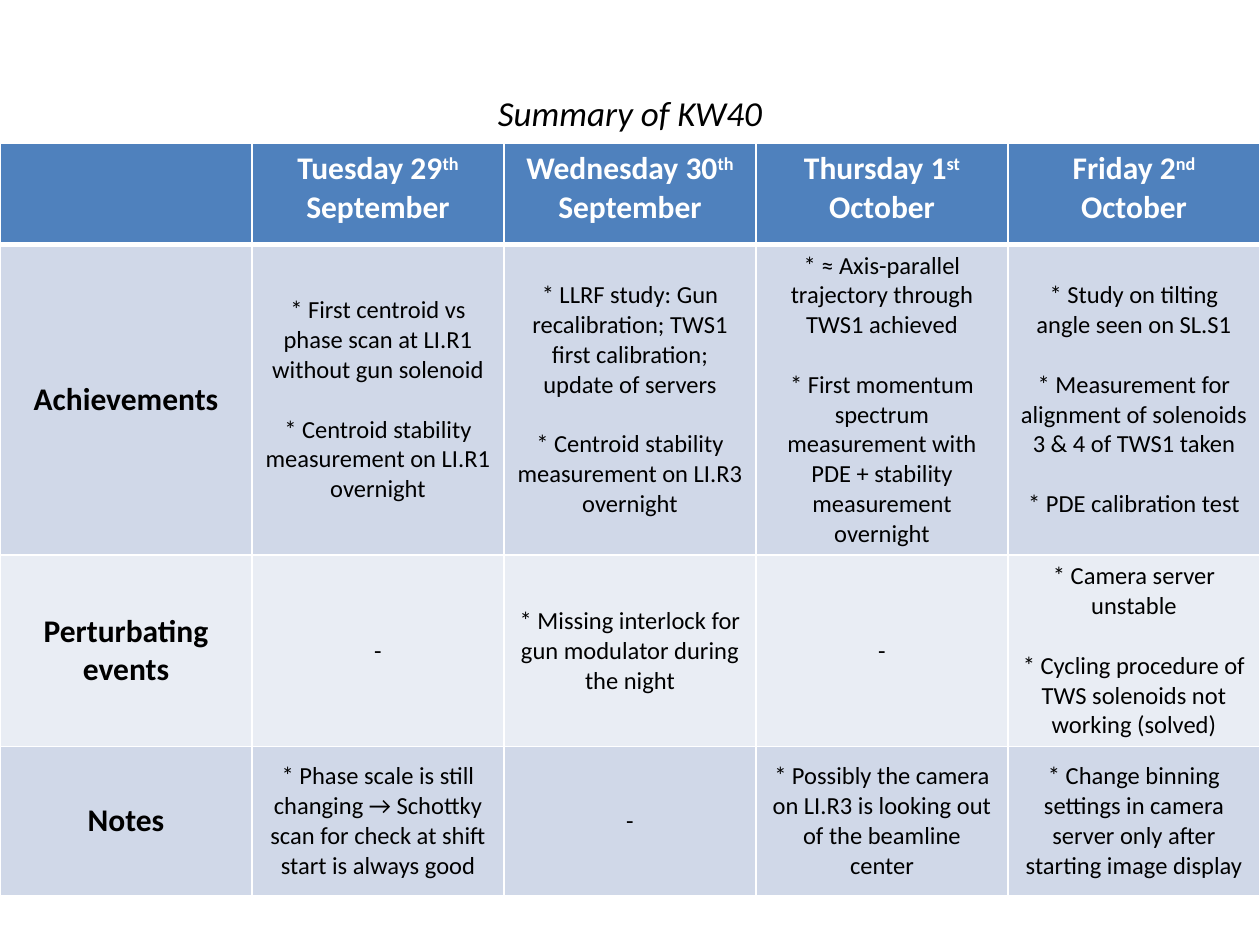
"""Build the weekly shift summary slide."""
from lxml import etree
from pptx import Presentation
from pptx import util as u
from pptx.dml.color import RGBColor
from pptx.enum import text
from pptx.oxml.ns import qn

COLORS = {"head": "4F81BD", "odd": "D0D8E8", "even": "E9EDF4",
          "white": "FFFFFF", "black": "000000"}

HEADS = [("Tuesday 29", "th", " September"), ("Wednesday 30", "th", " September"),
         ("Thursday 1", "st", " October"), ("Friday 2", "nd", " October")]

ROWS = [
    ("Achievements", [
        ["* First centroid vs phase scan at LI.R1 without gun solenoid",
         "* Centroid stability measurement on LI.R1 overnight"],
        ["* LLRF study: Gun recalibration; TWS1 first calibration; update of servers",
         "* Centroid stability measurement on LI.R3 overnight"],
        ["* ≈ Axis-parallel trajectory through TWS1 achieved",
         "* First momentum spectrum measurement with PDE + stability measurement overnight"],
        ["* Study on tilting angle seen on SL.S1",
         "* Measurement for alignment of solenoids 3 & 4 of TWS1 taken",
         "* PDE calibration test"]]),
    ("Perturbating events", [
        ["-"],
        ["* Missing interlock for gun modulator during the night"],
        ["-"],
        ["* Camera server unstable",
         "* Cycling procedure of TWS solenoids not working (solved)"]]),
    ("Notes", [
        ["* Phase scale is still changing → Schottky scan for check at shift start is always good"],
        ["-"],
        ["* Possibly the camera on LI.R3 is looking out of the beamline center"],
        ["* Change binning settings in camera server only after starting image display"]]),
]


class Deck:
    """Hold the style and the current slide."""

    face = "Calibri"
    big, small, gap = 18, 14, 17

    def __init__(self):
        self.prs = Presentation()
        self.prs.slide_width = u.Inches(10)
        self.prs.slide_height = u.Inches(7.5)
        self.slide = self.prs.slides.add_slide(self.prs.slide_layouts[5])

    def color(self, name):
        return RGBColor.from_string(COLORS[name])

    def run(self, para, words, size, color="black", bold=False, italic=False, raised=False):
        run = para.add_run()
        run.text = words
        font = run.font
        font.name, font.size = self.face, u.Pt(size)
        font.bold, font.italic = bold, italic
        font.color.rgb = self.color(color)
        if raised:
            run._r.get_or_add_rPr().set("baseline", "30000")

    def title(self, words, left, top, width, height):
        shape = self.slide.shapes.title
        shape.left, shape.top = u.Inches(left), u.Inches(top)
        shape.width, shape.height = u.Inches(width), u.Inches(height)
        frame = shape.text_frame
        frame.word_wrap = True
        frame.auto_size = text.MSO_AUTO_SIZE.NONE
        frame.vertical_anchor = text.MSO_ANCHOR.TOP
        para = frame.paragraphs[0]
        para.alignment = text.PP_ALIGN.CENTER
        self.run(para, words, 20, italic=True)

    def table(self, left, top, width, highs, cols):
        frame = self.slide.shapes.add_table(
            len(highs), cols, u.Inches(left), u.Inches(top),
            u.Inches(width), u.Inches(sum(highs)))
        for row, high in zip(frame.table.rows, highs):
            row.height = u.Inches(high)
        return frame.table

    def border(self, cell, base):
        props = cell._tc.get_or_add_tcPr()
        for spot, side in enumerate("LRTB"):
            wide = base if side == "B" else 1
            line = etree.Element(qn("a:ln" + side), w=str(u.Pt(wide)))
            fill = etree.SubElement(line, qn("a:solidFill"))
            etree.SubElement(fill, qn("a:srgbClr"), val=COLORS["white"])
            props.insert(spot, line)

    def cell(self, cell, paras, fill, size, color="black", bold=False, head=False):
        cell.fill.solid()
        cell.fill.fore_color.rgb = self.color(fill)
        self.border(cell, 3 if head else 1)
        cell.vertical_anchor = text.MSO_ANCHOR.TOP if head else text.MSO_ANCHOR.MIDDLE
        frame = cell.text_frame
        for num, runs in enumerate(paras):
            para = frame.add_paragraph() if num else frame.paragraphs[0]
            para.alignment = text.PP_ALIGN.CENTER
            if num:
                para.space_before = u.Pt(self.gap)
            for spot, words in enumerate(runs):
                self.run(para, words, size, color, bold, raised=spot == 1)

    def save(self):
        self.prs.save("out.pptx")


def main():
    deck = Deck()
    deck.title("Summary of KW40", 0, 0.68, 10, 0.44)
    grid = deck.table(0, 1.14, 10, [0.8, 2.43, 1.5, 1.18], 5)
    for col, runs in enumerate([()] + HEADS):
        deck.cell(grid.cell(0, col), [runs], "head", deck.big, "white", True, True)
    for row, (label, notes) in enumerate(ROWS, 1):
        fill = "odd" if row % 2 else "even"
        deck.cell(grid.cell(row, 0), [[label]], fill, deck.big, bold=True)
        for col, lines in enumerate(notes, 1):
            deck.cell(grid.cell(row, col), [[line] for line in lines], fill, deck.small)
    deck.save()


if __name__ == "__main__":
    main()
